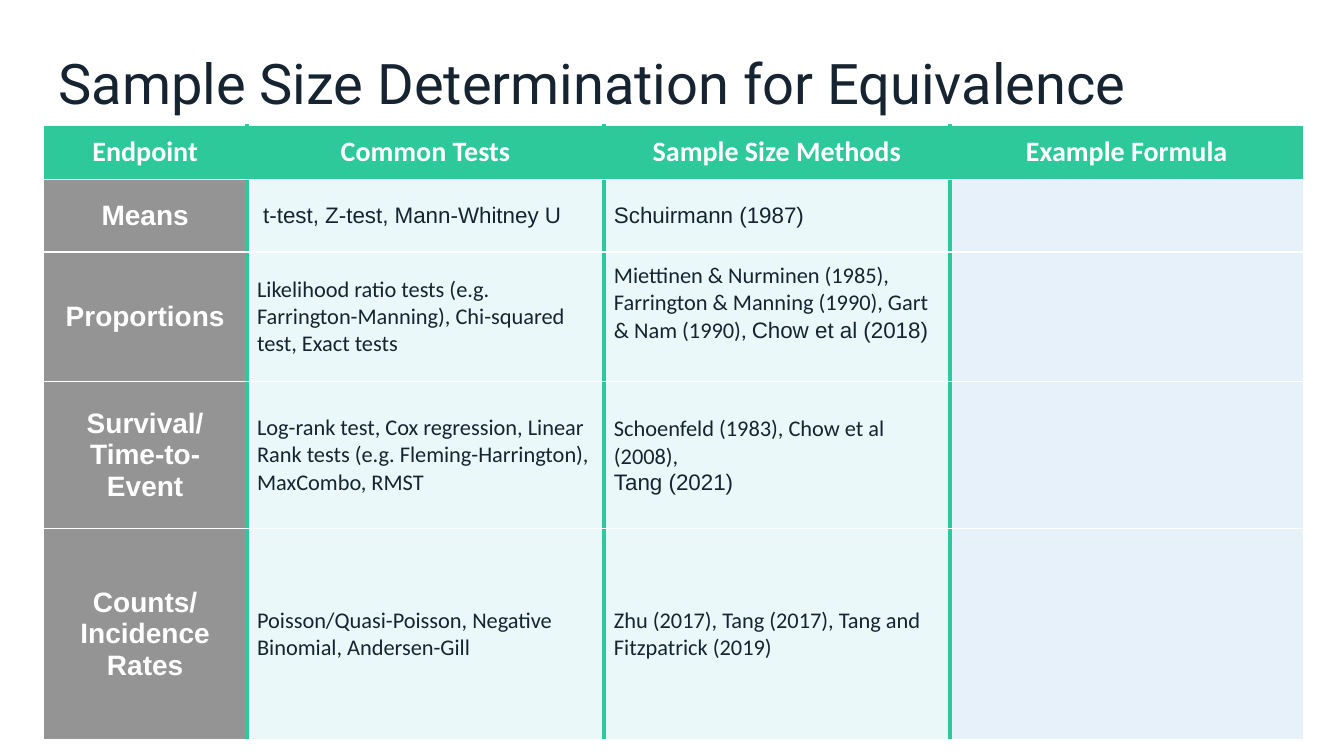
"""Build a slide with a table of sample size methods for equivalence."""
from lxml.etree import SubElement
from pptx import Presentation
from pptx.dml.color import RGBColor
from pptx.enum.shapes import MSO_SHAPE
from pptx.enum.text import MSO_ANCHOR, MSO_AUTO_SIZE, PP_ALIGN
from pptx.oxml import parse_xml
from pptx.oxml.ns import nsdecls, qn
from pptx.util import Inches, Pt

WIDE, HIGH = 13.33, 7.5
LEFT, TOP = 0.43, 1.24
GREEN, WHITE, INK = "2EC99B", "FFFFFF", "152430"
GRAY, AQUA, PALE = "262626", "D6F2F6", "E7F1FA"
TITLE = "Sample Size Determination for Equivalence"
COLS = (2.02, 3.54, 3.43, 3.51)
ROWS = (0.53, 0.72, 1.28, 1.46, 2.09)
CAL, ARI = "Calibri", "Arial"
HEADS = ("Endpoint", "Common Tests", "Sample Size Methods", "Example Formula")
BODY = [
    ("Means", [[(" t-test, Z-test, Mann-Whitney U", ARI)]],
     [[("Schuirmann (1987)", ARI)]]),
    ("Proportions",
     [[("Likelihood ratio tests (e.g. Farrington-Manning), "
        "Chi-squared test, Exact tests", CAL)]],
     [[("Miettinen & Nurminen (1985), Farrington & Manning (1990), "
        "Gart & Nam (1990), ", CAL), ("Chow et al (2018)", ARI)]]),
    ("Survival/\nTime-to-Event",
     [[("Log-rank test, Cox regression, Linear Rank tests "
        "(e.g. Fleming-Harrington), MaxCombo, RMST", CAL)]],
     [[("Schoenfeld (1983), Chow et al (2008),", CAL)],
      [("Tang (2021)", ARI)]]),
    ("Counts/\nIncidence Rates",
     [[("Poisson/Quasi-Poisson, Negative Binomial, Andersen-Gill", CAL)]],
     [[("Zhu (2017), Tang (2017), Tang and Fitzpatrick (2019)", CAL)]]),
]
LABEL = {"size": Pt(20), "bold": True, "hue": WHITE}
PLAIN = {"size": Pt(16), "bold": False, "hue": INK}
HEADING = {"size": Pt(40), "bold": False, "hue": INK}
RAISED = (2, 2)


def color(code):
    """Turn a hex string into a colour."""
    return RGBColor.from_string(code)


def style(font, name, form):
    """Apply a dict of format values to a font."""
    font.name = name
    for key, value in form.items():
        if key == "hue":
            font.color.rgb = color(value)
        else:
            setattr(font, key, value)


def write(frame, paras, form, align):
    """Write paragraphs of (text, font) runs into a text frame."""
    for num, runs in enumerate(paras):
        para = frame.add_paragraph() if num else frame.paragraphs[0]
        para.alignment = align
        for text, name in runs:
            run = para.add_run()
            run.text = text
            style(run.font, name, form)


def paint(item, code, alpha=None):
    """Fill a shape or a cell, the latter with an optional opacity."""
    item.fill.solid()
    item.fill.fore_color.rgb = color(code)
    if alpha:
        tint = next(item._tc.get_or_add_tcPr().iter(qn("a:srgbClr")))
        SubElement(tint, qn("a:alpha")).set("val", str(alpha * 1000))


def edge(cell, col):
    """Draw white rules between rows and green rules between columns."""
    sides = [("T", WHITE, 1), ("B", WHITE, 1)]
    if col < len(COLS) - 1:
        sides.insert(0, ("R", GREEN, 3))
    if col:
        sides.insert(0, ("L", GREEN, 3))
    props = cell._tc.get_or_add_tcPr()
    for spot, (side, code, wide) in enumerate(sides):
        props.insert(spot, parse_xml(
            f'<a:ln{side} {nsdecls("a")} w="{Pt(wide)}"><a:solidFill>'
            f'<a:srgbClr val="{code}"/></a:solidFill></a:ln{side}>'))


def head(slide):
    """Place and format the title and the bar under it."""
    title = slide.shapes.title
    box = {"left": 0.58, "top": 0.38, "width": 12.16, "height": 0.78}
    for key, value in box.items():
        setattr(title, key, Inches(value))
    frame = title.text_frame
    form = {"margin_left": 0, "margin_top": 0, "margin_right": 0,
            "margin_bottom": 0, "word_wrap": True,
            "auto_size": MSO_AUTO_SIZE.NONE,
            "vertical_anchor": MSO_ANCHOR.BOTTOM}
    for key, value in form.items():
        setattr(frame, key, value)
    write(frame, [[(TITLE, "Roboto")]], HEADING, PP_ALIGN.LEFT)
    frame.paragraphs[0].line_spacing = 0.9
    bar = slide.shapes.add_shape(
        MSO_SHAPE.ROUNDED_RECTANGLE, Inches(0.67), Inches(TOP),
        Inches(11.75), Inches(0.05))
    bar.adjustments[0] = 0.5
    bar.shadow.inherit = False
    bar.line.fill.background()
    paint(bar, GREEN)


def grid(slide):
    """Build the table of endpoints, tests and methods."""
    table = slide.shapes.add_table(
        len(ROWS), len(COLS), Inches(LEFT), Inches(TOP),
        Inches(sum(COLS)), Inches(sum(ROWS))).table
    table.first_row = table.horz_banding = False
    for col, wide in zip(table.columns, COLS):
        col.width = Inches(wide)
    for row, high in zip(table.rows, ROWS):
        row.height = Inches(high)
    for col, text in enumerate(HEADS):
        cell = table.cell(0, col)
        paint(cell, GREEN)
        write(cell.text_frame, [[(text, CAL)]], LABEL, PP_ALIGN.CENTER)
    for row, (name, tests, works) in enumerate(BODY, 1):
        label, *texts, blank = table.rows[row].cells
        paint(label, GRAY, 49)
        paras = [[(line, ARI)] for line in name.split("\n")]
        write(label.text_frame, paras, LABEL, PP_ALIGN.CENTER)
        for cell, paras in zip(texts, (tests, works)):
            paint(cell, AQUA, 49)
            write(cell.text_frame, paras, PLAIN, PP_ALIGN.LEFT)
        paint(blank, PALE)
    for row in range(len(ROWS)):
        for col in range(len(COLS)):
            cell = table.cell(row, col)
            cell.vertical_anchor = MSO_ANCHOR.MIDDLE
            for side in ("left", "top", "right", "bottom"):
                setattr(cell, f"margin_{side}", Inches(0.1))
            edge(cell, col)
    table.cell(*RAISED).margin_bottom = Inches(0.37)


def main():
    """Make the slide and save it."""
    deck = Presentation()
    deck.slide_width, deck.slide_height = Inches(WIDE), Inches(HIGH)
    slide = deck.slides.add_slide(deck.slide_layouts[5])
    head(slide)
    grid(slide)
    deck.save("out.pptx")


if __name__ == "__main__":
    main()
